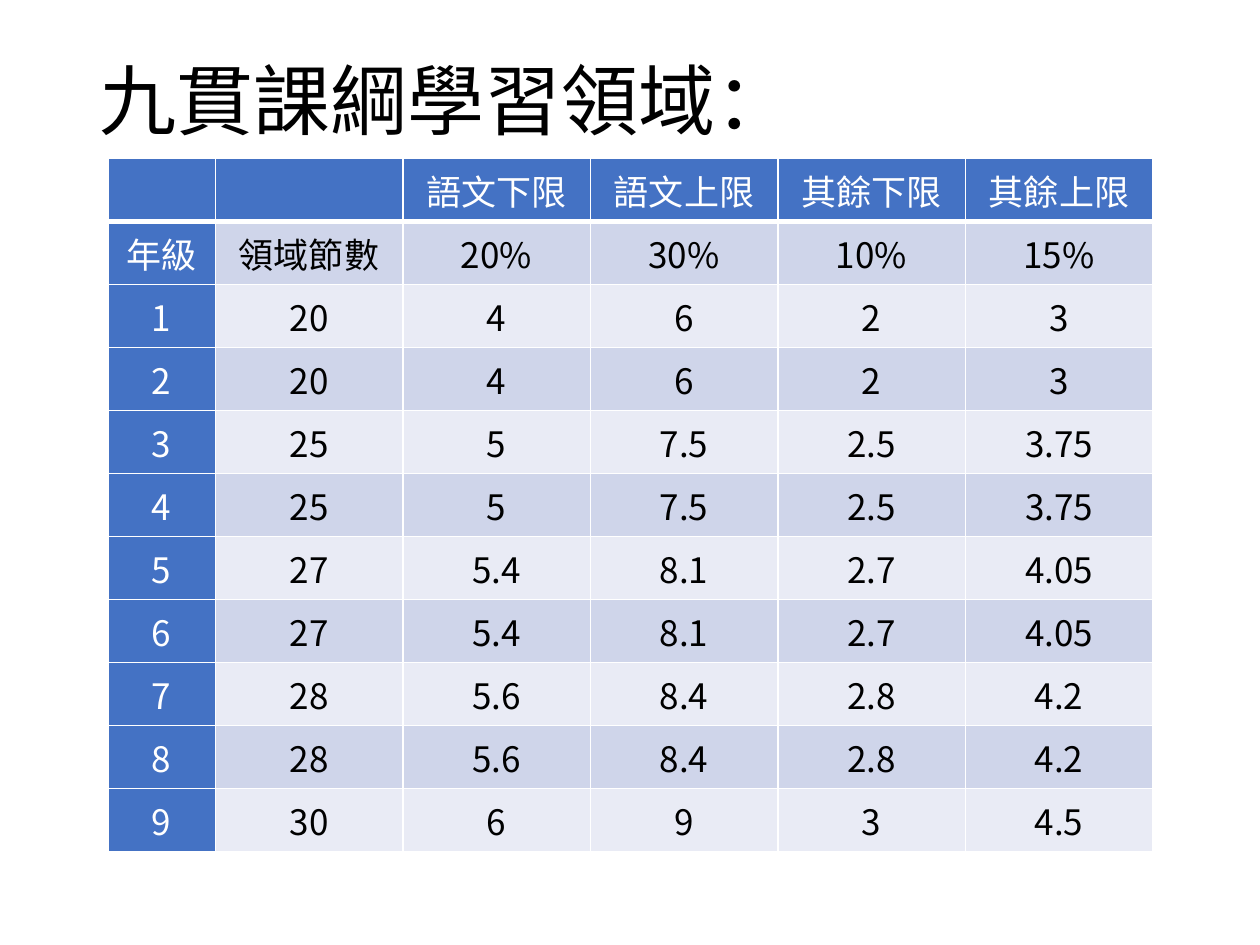
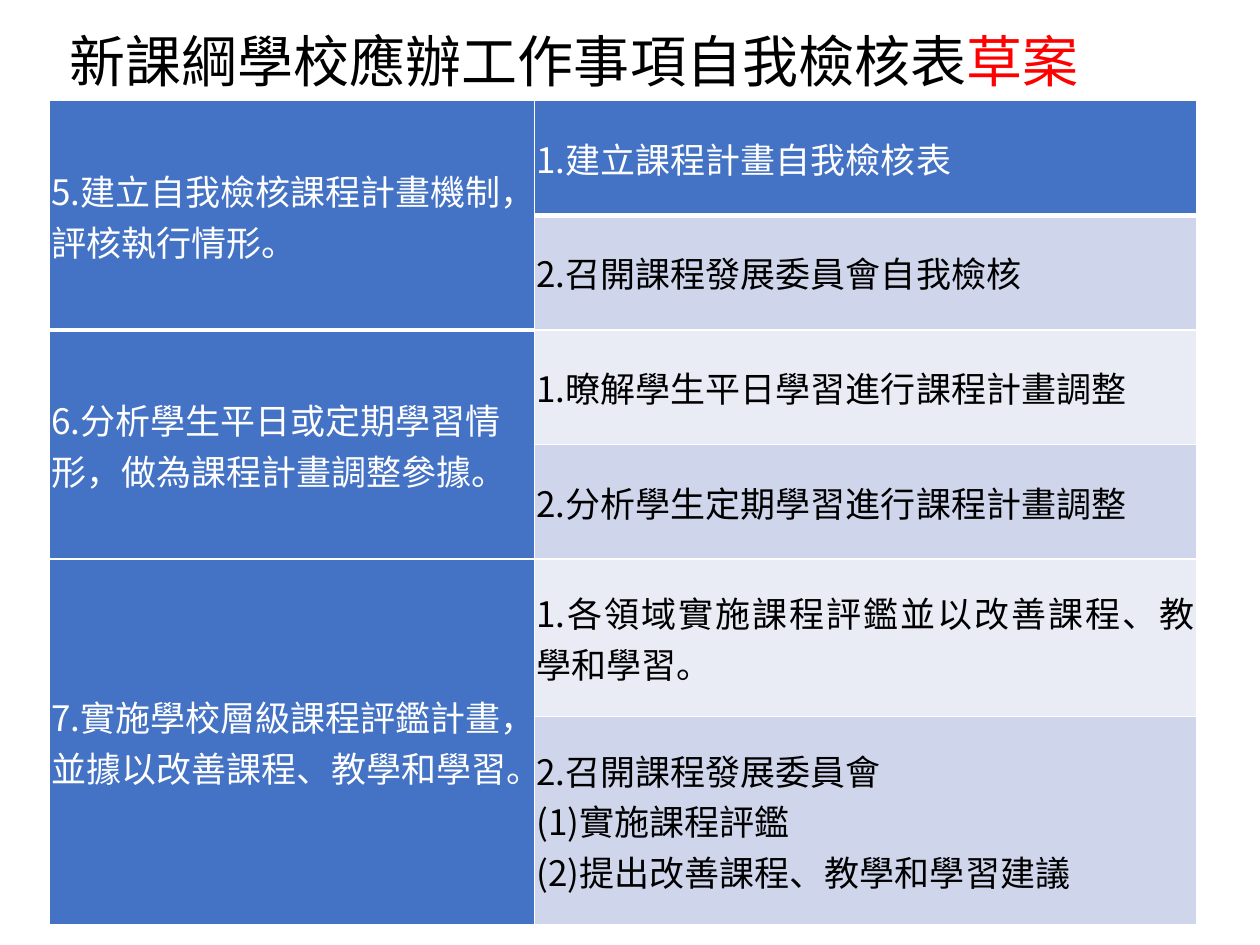
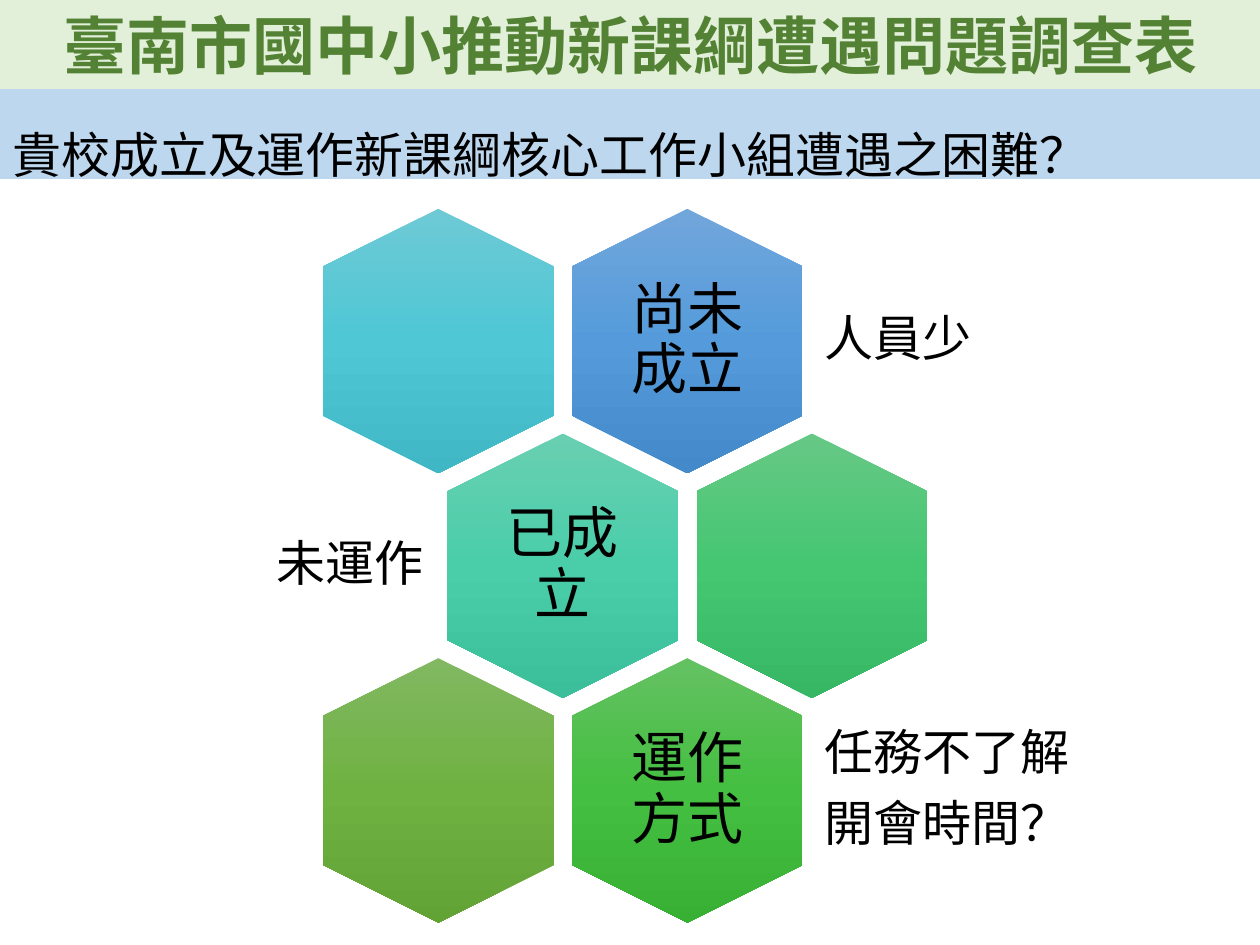
from dataclasses import dataclass
from typing import Optional

from lxml.etree import SubElement
from pptx import Presentation
from pptx.dml.color import RGBColor
from pptx.enum.shapes import MSO_SHAPE as Shape
from pptx.enum.text import MSO_ANCHOR as Anchor, MSO_AUTO_SIZE as AutoSize, PP_ALIGN as Align
from pptx.oxml import parse_xml
from pptx.oxml.ns import nsdecls, qn
from pptx.util import Cm, Pt

FONT = "Noto Sans CJK TC"
BLACK = RGBColor(0x00, 0x00, 0x00)
WHITE = RGBColor(0xFF, 0xFF, 0xFF)
RED = RGBColor(0xFF, 0x00, 0x00)
HEADER_BLUE = RGBColor(0x44, 0x72, 0xC4)
BAND_DARK = RGBColor(0xCF, 0xD5, 0xEA)
BAND_LIGHT = RGBColor(0xE9, 0xEB, 0xF5)
QUESTION_BLUE = RGBColor(0xBD, 0xD7, 0xEE)
TITLE_BAND_GREEN = RGBColor(0xE2, 0xF0, 0xD9)
TITLE_GREEN = RGBColor(0x54, 0x82, 0x35)

TITLE_ONLY = 5


@dataclass
class Box:
    """Position and size in centimetres."""
    left: float
    top: float
    width: float
    height: float

    def lengths(self) -> tuple:
        return Cm(self.left), Cm(self.top), Cm(self.width), Cm(self.height)


@dataclass
class TextStyle:
    size: int
    color: RGBColor = BLACK
    bold: bool = False
    align: Align = Align.LEFT
    line_spacing: float = 1.0
    space_after: float = 0
    anchor: Anchor = Anchor.TOP
    margin: Optional[float] = None
    grow: bool = False


@dataclass
class Grid:
    """A banded table; None continues the cell above."""
    left: float
    top: float
    columns: list
    rows: list
    texts: list
    aligns: list


@dataclass
class Hexagon:
    row: int
    column: int
    stops: tuple
    label: str = ""
    remarks: tuple = ()
    remark_on_left: bool = False


# Text
def format_paragraph(paragraph, style: TextStyle) -> None:
    paragraph.alignment = style.align
    paragraph.line_spacing = style.line_spacing
    paragraph.space_before = Pt(0)
    paragraph.space_after = Pt(style.space_after)
    font = paragraph.font
    font.size, font.bold, font.name = Pt(style.size), style.bold, FONT
    font.color.rgb = style.color
    SubElement(font._rPr, qn("a:ea")).set("typeface", FONT)


def write_text(shape, lines: tuple, style: TextStyle) -> None:
    frame = shape.text_frame
    frame.word_wrap = True
    frame.auto_size = AutoSize.SHAPE_TO_FIT_TEXT if style.grow else AutoSize.NONE
    frame.vertical_anchor = style.anchor
    if style.margin is not None:
        frame.margin_left = frame.margin_right = Cm(style.margin)
        frame.margin_top = frame.margin_bottom = Cm(style.margin)
    for index, line in enumerate(lines):
        paragraph = frame.add_paragraph() if index else frame.paragraphs[0]
        paragraph.text = line
        format_paragraph(paragraph, style)


def add_text(slide, box: Box, lines: tuple, style: TextStyle) -> None:
    write_text(slide.shapes.add_textbox(*box.lengths()), lines, style)


def add_titled_slide(presentation, title: str, box: Box, style: TextStyle):
    slide = presentation.slides.add_slide(presentation.slide_layouts[TITLE_ONLY])
    shape = slide.shapes.title
    shape.left, shape.top, shape.width, shape.height = box.lengths()
    write_text(shape, (title,), style)
    return slide


# Tables
def set_borders(cell, bottom_points: int) -> None:
    properties = cell._tc.get_or_add_tcPr()
    for index, side in enumerate("LRTB"):
        width = Pt(bottom_points if side == "B" else 1)
        properties.insert(index, parse_xml(
            f'<a:ln{side} {nsdecls("a")} w="{width}"><a:solidFill>'
            f'<a:srgbClr val="{WHITE}"/></a:solidFill></a:ln{side}>'))


def add_grid(slide, grid: Grid):
    box = Box(grid.left, grid.top, sum(grid.columns), sum(grid.rows))
    table = slide.shapes.add_table(len(grid.rows), len(grid.columns), *box.lengths()).table
    table.first_row = table.horz_banding = False
    for column, width in zip(table.columns, grid.columns):
        column.width = Cm(width)
    for row, height in zip(table.rows, grid.rows):
        row.height = Cm(height)
    for row, texts in enumerate(grid.texts):
        for column, text in enumerate(texts):
            cell = table.cell(row, column)
            in_header = row == 0 or (row == 1 and text is None)
            is_blue = in_header or column == 0
            cell.fill.solid()
            cell.fill.fore_color.rgb = HEADER_BLUE if is_blue else (BAND_LIGHT, BAND_DARK)[row % 2]
            set_borders(cell, 3 if in_header else 1)
            cell.vertical_anchor = Anchor.MIDDLE
            cell.margin_left = cell.margin_right = Cm(0.04)
            cell.margin_top = cell.margin_bottom = 0
            if text is None:
                table.cell(row - 1, column).merge(cell)
                continue
            paragraph = cell.text_frame.paragraphs[0]
            paragraph.text = text
            format_paragraph(paragraph, TextStyle(
                20, WHITE if is_blue else BLACK, align=grid.aligns[column]))
    return table


# Hexagon lattice
HEXAGON_LENGTH, HEXAGON_BREADTH = 5.33, 4.65
LATTICE_LEFT, LATTICE_TOP = 6.17, 4.55
COLUMN_STEP, ROW_STEP = 5.02, 4.53
LABEL_STYLE = TextStyle(32, align=Align.CENTER, line_spacing=0.9, space_after=11,
                        anchor=Anchor.MIDDLE, margin=0.33)


def set_gradient(shape, colors: tuple) -> None:
    stops = "".join(f'<a:gs pos="{position}"><a:srgbClr val="{color}"/></a:gs>'
                    for position, color in zip((0, 50000, 100000), colors))
    shape._element.spPr.find(qn("a:prstGeom")).addnext(parse_xml(
        f'<a:gradFill {nsdecls("a")} rotWithShape="0"><a:gsLst>{stops}</a:gsLst>'
        '<a:lin ang="5400000" scaled="0"/></a:gradFill>'))


def add_hexagon(slide, hexagon: Hexagon) -> None:
    left = LATTICE_LEFT + COLUMN_STEP * (hexagon.column + hexagon.row % 2 / 2)
    top = LATTICE_TOP + ROW_STEP * hexagon.row
    box = Box(left, top, HEXAGON_LENGTH, HEXAGON_BREADTH)
    shape = slide.shapes.add_shape(Shape.HEXAGON, *box.lengths())
    shape.rotation = 90
    shape.adjustments[0] = 0.25
    shape.shadow.inherit = False
    shape.line.fill.background()
    set_gradient(shape, hexagon.stops)
    if hexagon.label:
        add_text(slide, Box(left + 1.07, top + 0.49, 3.2, 3.68), (hexagon.label,), LABEL_STYLE)
    if hexagon.remarks:
        on_left = hexagon.remark_on_left
        remark_left, width = (left - 5.61, 5.77) if on_left else (left + 5.13, 5.97)
        add_text(slide, Box(remark_left, top + 0.72, width, 3.2), hexagon.remarks,
                 TextStyle(28, align=Align.RIGHT if on_left else Align.LEFT, line_spacing=0.9,
                           space_after=10, anchor=Anchor.MIDDLE, margin=0.3))


# Slides
def build_learning_areas(presentation) -> None:
    slide = add_titled_slide(presentation, "九貫課綱學習領域：", Box(1.75, 1.02, 21.89, 2.18),
                             TextStyle(44, line_spacing=0.9, anchor=Anchor.MIDDLE))
    percentages = (20, 30, 10, 15)
    lessons_by_grade = (20, 20, 25, 25, 27, 27, 28, 28, 30)
    texts = [["", "", "語文下限", "語文上限", "其餘下限", "其餘上限"],
             ["年級", "領域節數", *(f"{percentage}%" for percentage in percentages)]]
    for grade, lessons in enumerate(lessons_by_grade, start=1):
        shares = (f"{lessons * percentage / 100:g}" for percentage in percentages)
        texts.append([str(grade), str(lessons), *shares])
    add_grid(slide, Grid(2.18, 3.2, [2.16] + [3.78] * 5, [1.27] * len(texts),
                         texts, [Align.CENTER] * 6))


def build_checklist(presentation) -> None:
    slide = add_titled_slide(presentation, "新課綱學校應辦工作事項自我檢核表",
                             Box(0.48, 0.41, 22.2, 1.63),
                             TextStyle(32, align=Align.CENTER, grow=True))
    draft = slide.shapes.title.text_frame.paragraphs[0].add_run()
    draft.text = "草案"
    draft.font.color.rgb = RED
    texts = [
        ["5.建立自我檢核課程計畫機制，評核執行情形。", "1.建立課程計畫自我檢核表"],
        [None, "2.召開課程發展委員會自我檢核"],
        ["6.分析學生平日或定期學習情形，做為課程計畫調整參據。",
         "1.暸解學生平日學習進行課程計畫調整"],
        [None, "2.分析學生定期學習進行課程計畫調整"],
        ["7.實施學校層級課程評鑑計畫，並據以改善課程、教學和學習。",
         "1.各領域實施課程評鑑並以改善課程、教學和學習。"],
        [None, "2.召開課程發展委員會\n(1)實施課程評鑑\n(2)提出改善課程、教學和學習建議"],
    ]
    table = add_grid(slide, Grid(0.99, 2.03, [9.78, 13.36], [2.31] * 4 + [3.17, 4.2],
                                 texts, [Align.LEFT, Align.JUSTIFY]))
    table.cell(5, 1).text_frame.paragraphs[0].alignment = Align.LEFT


def build_survey(presentation) -> None:
    slide = add_titled_slide(presentation, "臺南市國中小推動新課綱遭遇問題調查表",
                             Box(0, 0, 25.4, 1.8),
                             TextStyle(36, TITLE_GREEN, True, Align.CENTER, grow=True))
    title_fill = slide.shapes.title.fill
    title_fill.solid()
    title_fill.fore_color.rgb = TITLE_BAND_GREEN

    question = slide.shapes.add_shape(Shape.RECTANGLE, *Box(0, 1.8, 25.4, 1.81).lengths())
    question.shadow.inherit = False
    question.line.fill.background()
    question.fill.solid()
    question.fill.fore_color.rgb = QUESTION_BLUE
    write_text(question, ("貴校成立及運作新課綱核心工作小組遭遇之困難？",),
               TextStyle(28, line_spacing=1.5, grow=True))

    for hexagon in (
        Hexagon(0, 1, ("71A6DB", "559BDB", "448ACA"), "尚未成立", ("人員少",)),
        Hexagon(0, 0, ("6DCAD5", "4FC7D5", "3FB7C4")),
        Hexagon(1, 0, ("69CFB1", "4ACEAA", "3BBE9A"), "已成立", ("未運作",), True),
        Hexagon(1, 1, ("66C885", "45C772", "37B764")),
        Hexagon(2, 1, ("64C162", "44BF41", "37B034"), "運作方式", ("任務不了解", "開會時間？")),
        Hexagon(2, 0, ("81B861", "6FB242", "62A336")),
    ):
        add_hexagon(slide, hexagon)


def main() -> None:
    presentation = Presentation()
    presentation.slide_width, presentation.slide_height = Cm(25.4), Cm(19.05)
    build_learning_areas(presentation)
    build_checklist(presentation)
    build_survey(presentation)
    presentation.save("out.pptx")


if __name__ == "__main__":
    main()
